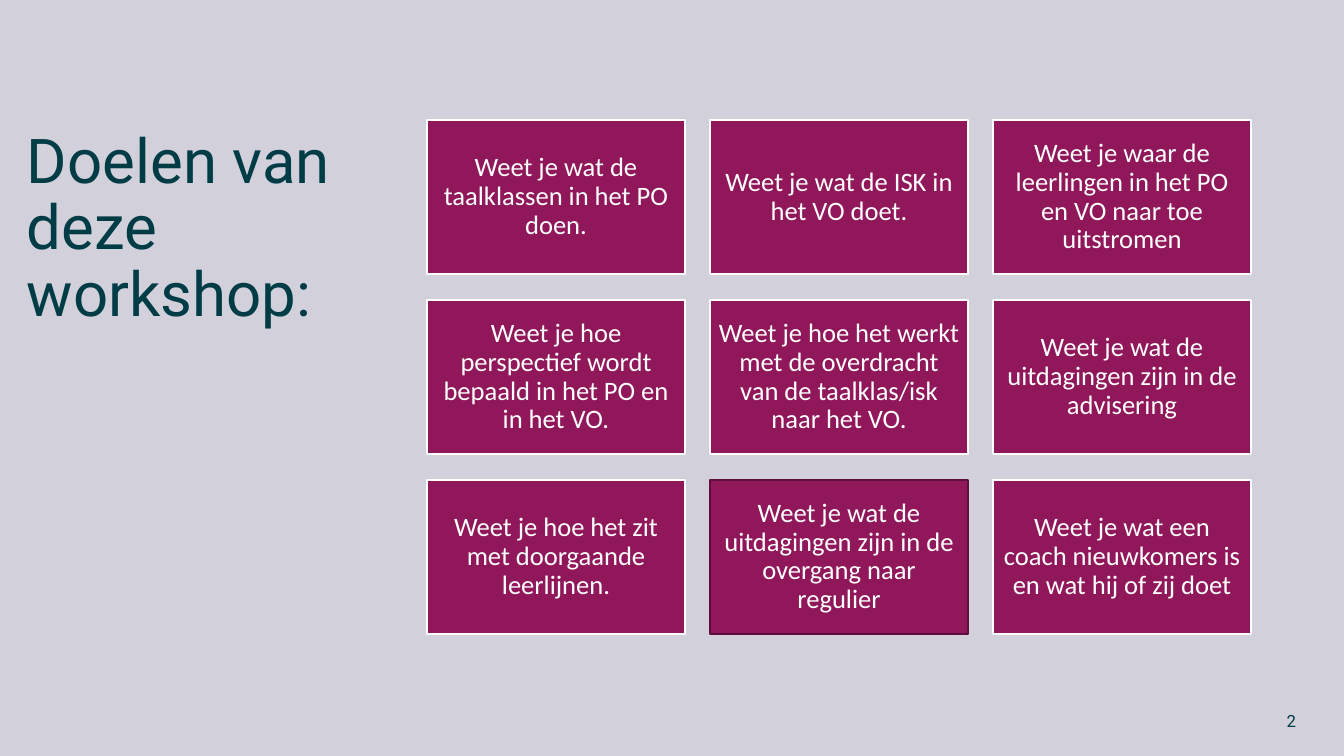
from pptx import Presentation
from pptx.dml.color import RGBColor as Rgb
from pptx.enum.shapes import MSO_SHAPE as Shape
from pptx.enum.text import MSO_ANCHOR as Anchor, PP_ALIGN as Align
from pptx.util import Pt

WIDE, HIGH = 1344, 756
SCALE = 12192000 / WIDE
COLORS = {
    "back": "D2D1DB",
    "ink": "003C46",
    "card": "90175A",
    "edge": "600F3C",
    "white": "FFFFFF",
}
LEFT, TOP = 427, 120
CARD_W, CARD_H = 258, 154
STEP_X, STEP_Y = 283, 180
COLS = 3
DARK = 7  # index of the goal with a dark edge

GOALS = [
    "Weet je wat de taalklassen in het PO doen.",
    "Weet je wat de ISK in het VO doet.",
    "Weet je waar de leerlingen in het PO en VO naar toe uitstromen",
    "Weet je hoe perspectief wordt bepaald in het PO en in het VO.",
    "Weet je hoe het werkt met de overdracht van de taalklas/isk naar het VO.",
    "Weet je wat de uitdagingen zijn in de advisering",
    "Weet je hoe het zit met doorgaande leerlijnen.",
    "Weet je wat de uitdagingen zijn in de overgang naar regulier",
    "Weet je wat een coach nieuwkomers is en wat hij of zij doet",
]


def px(count):
    return round(count * SCALE)


def color(name):
    return Rgb.from_string(COLORS[name])


def write(shape, text, size, font, tint, align, anchor, pad, space=0.9):
    """Fill a shape with one run; pad is the side and the top inset in px."""
    frame = shape.text_frame
    frame.word_wrap = True
    frame.vertical_anchor = anchor
    frame.margin_left = frame.margin_right = px(pad[0])
    frame.margin_top = frame.margin_bottom = px(pad[1])
    para = frame.paragraphs[0]
    para.alignment = align
    para.line_spacing = space
    run = para.add_run()
    run.text = text
    run.font.size = Pt(size)
    run.font.name = font
    run.font.color.rgb = color(tint)


def add_box(slide, x, y, w, h):
    return slide.shapes.add_textbox(px(x), px(y), px(w), px(h))


def add_card(slide, x, y, text, edge):
    card = slide.shapes.add_shape(
        Shape.RECTANGLE, px(x), px(y), px(CARD_W), px(CARD_H))
    card.shadow.inherit = False
    card.fill.solid()
    card.fill.fore_color.rgb = color("card")
    card.line.color.rgb = color(edge)
    card.line.width = Pt(1.5)
    write(card, text, 19, "Calibri", "white", Align.CENTER, Anchor.MIDDLE, (8, 8))


def main():
    deck = Presentation()
    deck.slide_width, deck.slide_height = px(WIDE), px(HIGH)
    slide = deck.slides.add_slide(deck.slide_layouts[6])
    fill = slide.background.fill
    fill.solid()
    fill.fore_color.rgb = color("back")

    title = add_box(slide, 17, 119, 377, 262)
    write(title, "Doelen van deze workshop:", 44.1, "Roboto", "ink",
          Align.LEFT, Anchor.TOP, (10, 11))

    for index, goal in enumerate(GOALS):
        row, col = divmod(index, COLS)
        edge = "edge" if index == DARK else "white"
        add_card(slide, LEFT + col * STEP_X, TOP + row * STEP_Y, goal, edge)

    number = add_box(slide, 1004, 701, 302, 40)
    write(number, "2", 12, "Roboto", "ink", Align.RIGHT, Anchor.MIDDLE, (10, 5), 1.0)

    deck.save("out.pptx")


if __name__ == "__main__":
    main()
